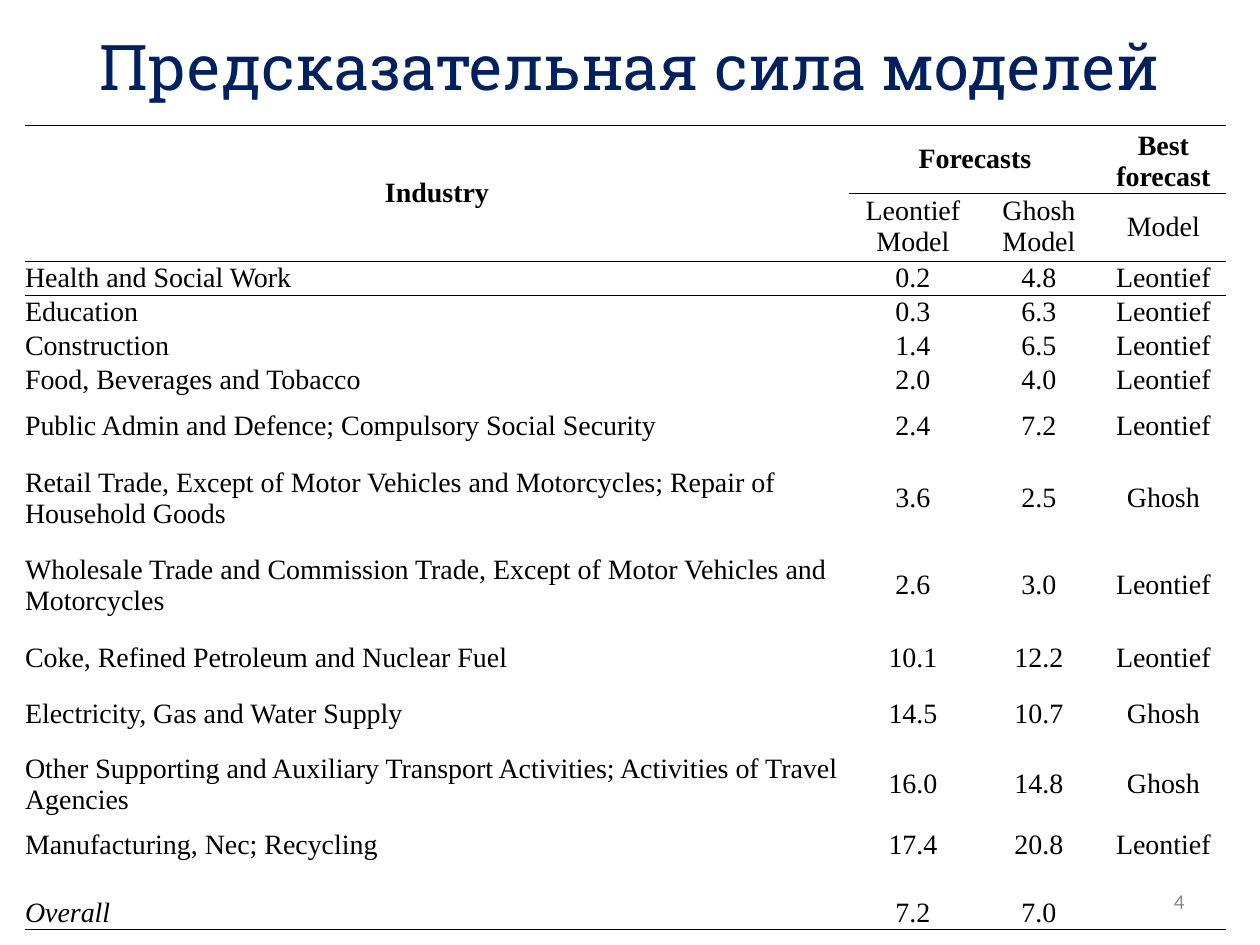
from dataclasses import dataclass

from lxml import etree
from pptx import Presentation
from pptx import util as u
from pptx.dml.color import RGBColor
from pptx.enum import text
from pptx.oxml import ns

PX_PER_INCH = 126
NAVY = RGBColor(0x00, 0x20, 0x60)
BLACK = RGBColor(0x00, 0x00, 0x00)
GREY = RGBColor(0x8C, 0x8C, 0x8C)
LEFT, CENTER, RIGHT = (text.PP_ALIGN.LEFT, text.PP_ALIGN.CENTER,
                       text.PP_ALIGN.RIGHT)
MIDDLE, BOTTOM = text.MSO_ANCHOR.MIDDLE, text.MSO_ANCHOR.BOTTOM

TABLE_FONT = "Times New Roman"
TABLE_SIZE = u.Pt(16)
RULE_WIDTH = u.Pt(0.5)
NO_STYLE = "{2D5ABB26-0587-4C30-8999-92F81FD0307C}"
COLUMN_WIDTHS = (824, 128, 124, 125)
HEADER_HEIGHT = 68
HEADER = (
    ("Industry", "Forecasts", "", "Best forecast"),
    ("", "Leontief Model", "Ghosh Model", "Model"),
)


@dataclass(frozen=True)
class Label:
    content: str
    left: int
    top: int
    width: int
    height: int
    align: text.PP_ALIGN
    font: dict


@dataclass(frozen=True)
class Forecast:
    industry: str
    leontief: str
    ghosh: str
    best: str
    height: int = 34

    def cells(self) -> tuple:
        return self.industry, self.leontief, self.ghosh, self.best


LABELS = (
    Label("Предсказательная сила моделей", 63, 6, 1134, 118, CENTER,
          {"name": "Roboto Slab", "size": u.Pt(36), "color": NAVY}),
    Label("4", 903, 876, 294, 50, RIGHT,
          {"name": "Calibri", "size": u.Pt(12), "color": GREY}),
)

FORECASTS = (
    Forecast("Health and Social Work", "0.2", "4.8", "Leontief"),
    Forecast("Education", "0.3", "6.3", "Leontief"),
    Forecast("Construction", "1.4", "6.5", "Leontief"),
    Forecast("Food, Beverages and Tobacco", "2.0", "4.0", "Leontief"),
    Forecast("Public Admin and Defence; Compulsory Social Security",
             "2.4", "7.2", "Leontief", 58),
    Forecast("Retail Trade, Except of Motor Vehicles and Motorcycles; "
             "Repair of Household Goods", "3.6", "2.5", "Ghosh", 87),
    Forecast("Wholesale Trade and Commission Trade, Except of Motor Vehicles "
             "and Motorcycles", "2.6", "3.0", "Leontief", 87),
    Forecast("Coke, Refined Petroleum and Nuclear Fuel",
             "10.1", "12.2", "Leontief", 58),
    Forecast("Electricity, Gas and Water Supply",
             "14.5", "10.7", "Ghosh", 54),
    Forecast("Other Supporting and Auxiliary Transport Activities; "
             "Activities of Travel Agencies", "16.0", "14.8", "Ghosh", 87),
    Forecast("Manufacturing, Nec; Recycling", "17.4", "20.8", "Leontief"),
    Forecast("", "", "", ""),
    Forecast("Overall", "7.2", "7.0", ""),
)


def px(length: int) -> u.Emu:
    return u.Emu(round(length * u.Inches(1) / PX_PER_INCH))


def set_attributes(target, values: dict) -> None:
    for name, value in values.items():
        setattr(target, name, value)


def add_run(paragraph, content: str, font: dict) -> None:
    run = paragraph.add_run()
    run.text = content
    values = dict(font)
    run.font.color.rgb = values.pop("color")
    set_attributes(run.font, values)


def add_label(slide, label: Label) -> None:
    box = slide.shapes.add_textbox(px(label.left), px(label.top),
                                   px(label.width), px(label.height))
    set_attributes(box.text_frame,
                   {"word_wrap": True, "vertical_anchor": MIDDLE})
    paragraph = box.text_frame.paragraphs[0]
    paragraph.alignment = label.align
    add_run(paragraph, label.content, label.font)


def add_rule(cell, edge: str) -> None:
    """Draw a thin black border on the "T" (top) or "B" (bottom) edge."""
    properties = cell._tc.get_or_add_tcPr()
    line = etree.SubElement(properties, ns.qn(f"a:ln{edge}"),
                            w=str(RULE_WIDTH))
    fill = etree.SubElement(line, ns.qn("a:solidFill"))
    etree.SubElement(fill, ns.qn("a:srgbClr"), val=str(BLACK))


def fill_cell(cell, content: str, align: text.PP_ALIGN, anchor,
              edges: str, **emphasis: bool) -> None:
    set_attributes(cell, {"margin_left": 0, "margin_right": 0,
                          "margin_top": 0, "margin_bottom": 0,
                          "vertical_anchor": anchor})
    for edge in edges:
        add_rule(cell, edge)
    cell.fill.background()
    paragraph = cell.text_frame.paragraphs[0]
    paragraph.alignment = align
    if content:
        add_run(paragraph, content, {"name": TABLE_FONT, "size": TABLE_SIZE,
                                     "color": BLACK, **emphasis})
    else:
        # The end mark keeps an empty row from growing to the default size.
        etree.SubElement(paragraph._p, ns.qn("a:endParaRPr"),
                         sz=str(int(TABLE_SIZE.pt * 100)))


def add_forecast_table(slide, left: int, top: int) -> None:
    heights = [HEADER_HEIGHT] * len(HEADER) + [f.height for f in FORECASTS]
    frame = slide.shapes.add_table(
        len(heights), len(COLUMN_WIDTHS), px(left), px(top),
        px(sum(COLUMN_WIDTHS)), px(sum(heights)))
    table = frame.table
    set_attributes(table, {"first_row": False, "horz_banding": False})
    table._tbl.tblPr.find(ns.qn("a:tableStyleId")).text = NO_STYLE
    for column, width in zip(table.columns, COLUMN_WIDTHS):
        column.width = px(width)
    for row, height in zip(table.rows, heights):
        row.height = px(height)

    for row, titles in enumerate(HEADER):
        for column, title in enumerate(titles):
            anchor = BOTTOM if title == "Best forecast" else MIDDLE
            fill_cell(table.cell(row, column), title, CENTER, anchor, "TB",
                      bold=row == 0)
    table.cell(0, 0).merge(table.cell(1, 0))
    table.cell(0, 1).merge(table.cell(0, 2))

    for row, forecast in enumerate(FORECASTS, start=len(HEADER)):
        edges = {len(HEADER): "T", len(heights) - 1: "B"}.get(row, "")
        for column, content in enumerate(forecast.cells()):
            fill_cell(table.cell(row, column), content,
                      CENTER if column else LEFT, MIDDLE, edges,
                      italic=content == "Overall")


def main() -> None:
    presentation = Presentation()
    set_attributes(presentation, {"slide_width": px(1260),
                                  "slide_height": px(945)})
    slide = presentation.slides.add_slide(presentation.slide_layouts[6])
    for label in LABELS:
        add_label(slide, label)
    add_forecast_table(slide, 25, 125)
    presentation.save("out.pptx")


if __name__ == "__main__":
    main()
